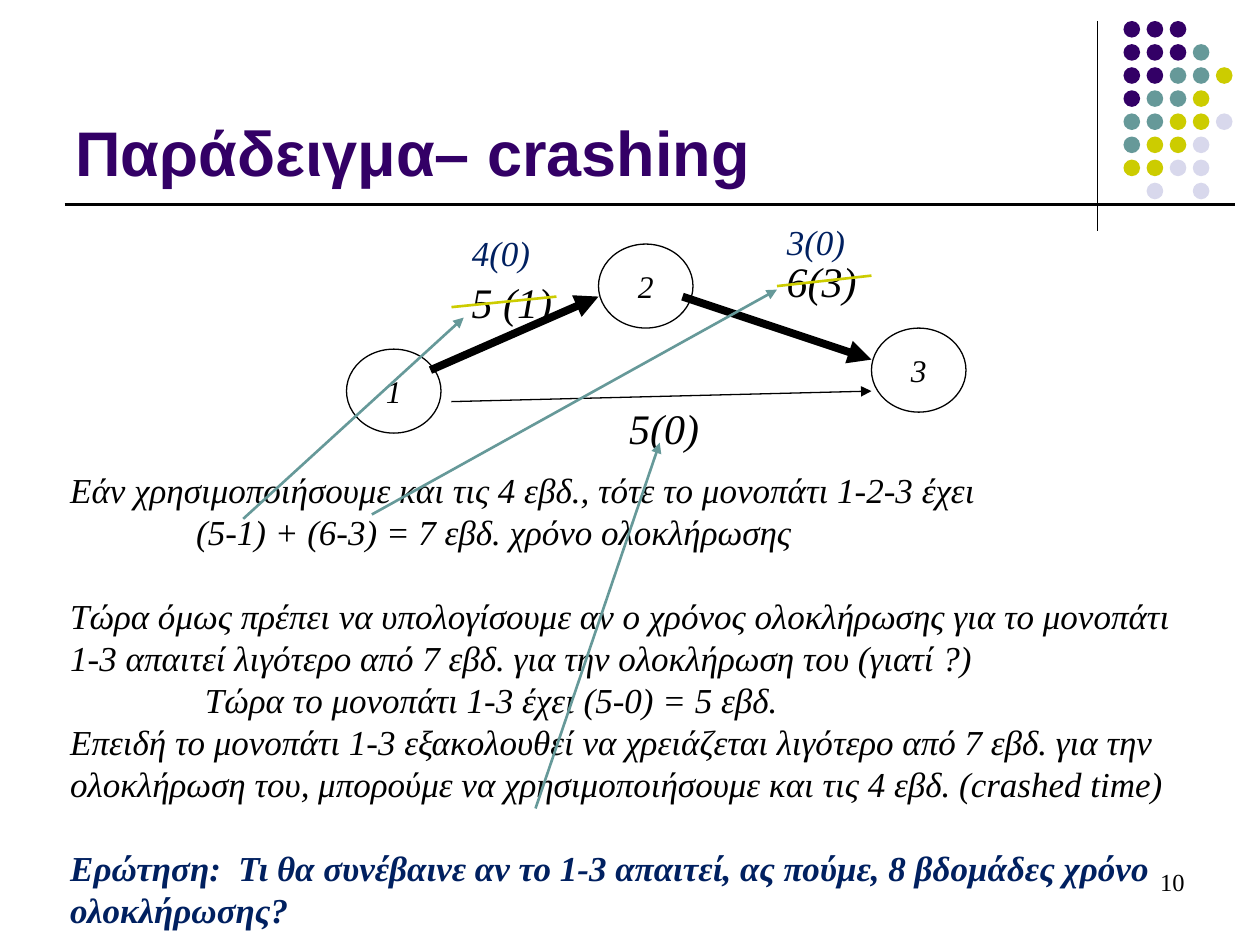
"""Build the crashing example slide with its project network."""
from lxml import etree
from pptx import Presentation
from pptx.dml.color import RGBColor
from pptx.enum.shapes import MSO_CONNECTOR as CONN, MSO_SHAPE as SHAPE
from pptx.enum.text import MSO_ANCHOR as ANCHOR, MSO_AUTO_SIZE as FIT, PP_ALIGN as ALIGN
from pptx.oxml.ns import qn
from pptx.util import Pt

BLACK = RGBColor(0x00, 0x00, 0x00)
WHITE = RGBColor(0xFF, 0xFF, 0xFF)
PURPLE = RGBColor(0x33, 0x00, 0x66)
TEAL = RGBColor(0x66, 0x99, 0x99)
OLIVE = RGBColor(0xCC, 0xCC, 0x00)
LILAC = RGBColor(0xD8, 0xD8, 0xEC)
NAVY = RGBColor(0x00, 0x20, 0x60)
SERIF = "Times New Roman"

prs = Presentation()
prs.slide_width, prs.slide_height = Pt(720), Pt(540)
s = prs.slides.add_slide(prs.slide_layouts[6])


def write(p, text, color=BLACK, **font):
    p.text = text
    for r in p.runs:
        for name, value in {"name": SERIF, "italic": True, **font}.items():
            setattr(r.font, name, value)
        r.font.color.rgb = color


def line(x1, y1, x2, y2, color, width, arrow=False):
    c = s.shapes.add_connector(CONN.STRAIGHT, Pt(x1), Pt(y1), Pt(x2), Pt(y2))
    c.line.color.rgb = color
    c.line.width = Pt(width)
    if arrow:
        etree.SubElement(c.line._get_or_add_ln(), qn("a:tailEnd"), type="triangle")
    etree.SubElement(c._element.spPr, qn("a:effectLst"))


line(627, 12, 627, 132, BLACK, 0.75)

DOTS = ["PPP", "PPPT", "PPTTO", "PTTO", "TTOOL", "TOOL", "OOLL", " L L"]
DOT_COLORS = {"P": PURPLE, "T": TEAL, "O": OLIVE, "L": LILAC}
for row, dots in enumerate(DOTS):
    for col, key in enumerate(dots):
        if key in DOT_COLORS:
            dot = s.shapes.add_shape(SHAPE.OVAL, Pt(642 + 13.2 * col), Pt(12 + 13.2 * row), Pt(9.5), Pt(9.5))
            dot.shadow.inherit = False
            dot.fill.solid()
            dot.fill.fore_color.rgb = DOT_COLORS[key]
            dot.line.fill.background()

line(37, 117, 706, 117, BLACK, 1.5)

title = s.shapes.add_textbox(Pt(36), Pt(9.5), Pt(594), Pt(102))
tf = title.text_frame
tf.word_wrap = True
tf.vertical_anchor = ANCHOR.BOTTOM
write(tf.paragraphs[0], "Παράδειγμα– crashing", PURPLE, name="Arial", size=Pt(36), bold=True, italic=False)

number = s.shapes.add_textbox(Pt(516), Pt(492), Pt(168), Pt(36))
tf = number.text_frame
tf.word_wrap = True
tf.paragraphs[0].alignment = ALIGN.RIGHT
write(tf.paragraphs[0], "10", size=Pt(14), italic=False)

for label, x, y in [("1", 198, 199.5), ("3", 498, 187.5), ("2", 342, 139.5)]:
    node = s.shapes.add_shape(SHAPE.OVAL, Pt(x), Pt(y), Pt(54), Pt(48))
    node.shadow.inherit = False
    node.fill.solid()
    node.fill.fore_color.rgb = WHITE
    node.line.color.rgb = BLACK
    node.line.width = Pt(0.75)
    tf = node.text_frame
    tf.word_wrap = False
    tf.vertical_anchor = ANCHOR.MIDDLE
    tf.paragraphs[0].alignment = ALIGN.CENTER
    write(tf.paragraphs[0], label, size=Pt(18))

line(246, 211.5, 342, 169.5, BLACK, 4.5, True)
line(390, 169.5, 498, 205.5, BLACK, 4.5, True)
line(258, 229.5, 498, 223.5, BLACK, 0.75, True)

LABELS = [
    ("5 (1)", 262.5, 154.5, 61, 24, BLACK),
    ("6(3)", 442.5, 142.5, 55, 24, BLACK),
    ("5(0)", 352.5, 226.5, 55, 24, BLACK),
    ("4(0)", 262.5, 129, 49, 20, NAVY),
    ("3(0)", 442.5, 122.5, 49, 20, NAVY),
]
for text, x, y, width, size, color in LABELS:
    label = s.shapes.add_textbox(Pt(x), Pt(y), Pt(width), Pt(1.2 * size + 7.2))
    tf = label.text_frame
    tf.word_wrap = False
    tf.auto_size = FIT.SHAPE_TO_FIT_TEXT
    write(tf.paragraphs[0], text, color, size=Pt(size))

BODY = [
    ("Εάν χρησιμοποιήσουμε και τις 4 εβδ., τότε το μονοπάτι 1-2-3 έχει", 0, {}),
    ("\t(5-1) + (6-3) = 7 εβδ. χρόνο ολοκλήρωσης", 0, {}),
    ("Τώρα όμως πρέπει να υπολογίσουμε αν ο χρόνος ολοκλήρωσης για το μονοπάτι \v"
     "1-3 απαιτεί λιγότερο από 7 εβδ. για την ολοκλήρωση του (γιατί ?)", 24, {}),
    ("\t Τώρα το μονοπάτι 1-3 έχει (5-0) = 5 εβδ.", 0, {}),
    ("Επειδή το μονοπάτι 1-3 εξακολουθεί να χρειάζεται λιγότερο από 7 εβδ. για την "
     "ολοκλήρωση του, μπορούμε να χρησιμοποιήσουμε και τις 4 εβδ. (crashed time)", 0, {}),
    ("Ερώτηση:  Τι θα συνέβαινε αν το 1-3 απαιτεί, ας πούμε, 8 βδομάδες χρόνο ολοκλήρωσης?",
     24, {"color": NAVY, "bold": True}),
]
body = s.shapes.add_textbox(Pt(33), Pt(264), Pt(672), Pt(273.5))
tf = body.text_frame
tf.word_wrap = True
for i, (text, gap, style) in enumerate(BODY):
    p = tf.add_paragraph() if i else tf.paragraphs[0]
    p.line_spacing = Pt(24)
    p.space_before = Pt(gap)
    if text.startswith("\t"):
        tabs = etree.SubElement(p._p.get_or_add_pPr(), qn("a:tabLst"))
        etree.SubElement(tabs, qn("a:tab"), pos=str(int(Pt(72))), algn="l")
    write(p, text, size=Pt(20), **style)

line(139, 296.5, 265, 181.5, TEAL, 1.5, True)
line(212.5, 294, 444, 165.5, TEAL, 1.5, True)
line(306, 462, 377, 253, TEAL, 1.5, True)
line(258, 175.5, 318, 169.5, OLIVE, 1.5)
line(444, 163.5, 498, 157.5, OLIVE, 1.5)

prs.save("out.pptx")
